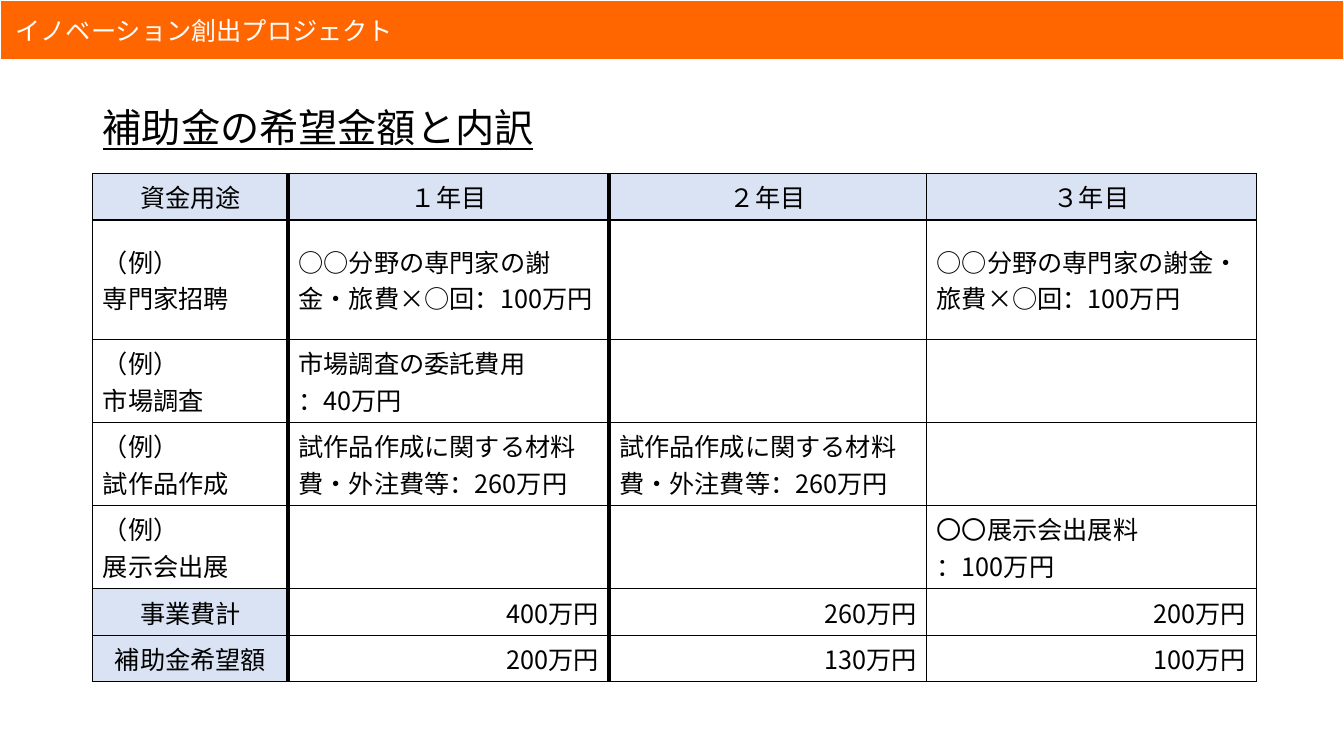
from pptx import Presentation
from pptx.dml.color import RGBColor
from pptx.enum.shapes import MSO_SHAPE
from pptx.enum.text import MSO_ANCHOR, PP_ALIGN
from pptx.oxml.ns import qn
from pptx.util import Inches, Pt
from lxml.etree import SubElement

FONT = "Noto Sans CJK JP"
BLACK, WHITE, ORANGE, PALE_BLUE = "000000", "FFFFFF", "FF6600", "DAE3F3"


def color(hex_code):
    return RGBColor.from_string(hex_code)


def write(frame, text, size, hex_code, align=PP_ALIGN.LEFT):
    frame.text = text
    for paragraph in frame.paragraphs:
        paragraph.alignment = align
        for run in paragraph.runs:
            run.font.size = Pt(size)
            run.font.name = FONT
            run.font.color.rgb = color(hex_code)
            SubElement(run.font._element, qn("a:ea")).set("typeface", FONT)


prs = Presentation()
prs.slide_width, prs.slide_height = Inches(13.33), Inches(7.5)
slide = prs.slides.add_slide(prs.slide_layouts[5])

# Project banner
banner = slide.shapes.add_shape(MSO_SHAPE.RECTANGLE, 0, 0, prs.slide_width, Inches(0.6))
banner.shadow.inherit = False
banner.fill.solid()
banner.fill.fore_color.rgb = color(ORANGE)
banner.line.color.rgb = color(WHITE)
banner.line.width = Pt(1.5)
banner.text_frame.vertical_anchor = MSO_ANCHOR.MIDDLE
write(banner.text_frame, " イノベーション創出プロジェクト", 18, WHITE)

# Title
title = slide.shapes.title
title.left, title.top = Inches(0.92), Inches(0.74)
title.width, title.height = Inches(11.5), Inches(1.1)
title.text_frame.vertical_anchor = MSO_ANCHOR.MIDDLE
write(title.text_frame, "補助金の希望金額と内訳", 28, BLACK)
heading = title.text_frame.paragraphs[0]
heading.line_spacing = 0.9
heading.runs[0].font.underline = True

# Budget by purpose and year
expert = "○○分野の専門家の謝金・旅費×○回：100万円"
prototype = "試作品作成に関する材料費・外注費等：260万円"
budget = [
    ["資金用途", "１年目", "２年目", "３年目"],
    ["（例）\n専門家招聘", expert, "", expert],
    ["（例）\n市場調査", "市場調査の委託費用\n：40万円", "", ""],
    ["（例）\n試作品作成", prototype, prototype, ""],
    ["（例）\n展示会出展", "", "", "〇〇展示会出展料\n：100万円"],
    ["事業費計", "400万円", "260万円", "200万円"],
    ["補助金希望額", "200万円", "130万円", "100万円"],
]
column_widths = [1.94, 3.18, 3.15, 3.27]
row_heights = [0.46] + [0.81] * 4 + [0.46] * 2
first_total = 5
table = slide.shapes.add_table(len(budget), len(column_widths), Inches(0.92), Inches(1.72),
                               Inches(sum(column_widths)), Inches(sum(row_heights))).table
for column, width in zip(table.columns, column_widths):
    column.width = Inches(width)
for row, height in zip(table.rows, row_heights):
    row.height = Inches(height)

for r, entries in enumerate(budget):
    for c, entry in enumerate(entries):
        cell = table.cell(r, c)
        is_total = r >= first_total
        is_label = r == 0 or (is_total and c == 0)
        if is_label:
            align = PP_ALIGN.CENTER
        else:
            align = PP_ALIGN.RIGHT if is_total else PP_ALIGN.LEFT
        write(cell.text_frame, entry, 18, BLACK, align)
        cell.vertical_anchor = MSO_ANCHOR.MIDDLE

        # Borders, with heavy rules on both sides of the first year
        left = 3 if c in (1, 2) else 1
        right = 3 if c in (0, 1) else 1
        properties = cell._tc.get_or_add_tcPr()
        for side, points in (("L", left), ("R", right), ("T", 1), ("B", 1)):
            border = SubElement(properties, qn(f"a:ln{side}"), w=str(Pt(points)))
            fill = SubElement(border, qn("a:solidFill"))
            SubElement(fill, qn("a:srgbClr"), val=BLACK)
        cell.fill.solid()
        cell.fill.fore_color.rgb = color(PALE_BLUE if is_label else WHITE)

prs.save("out.pptx")
